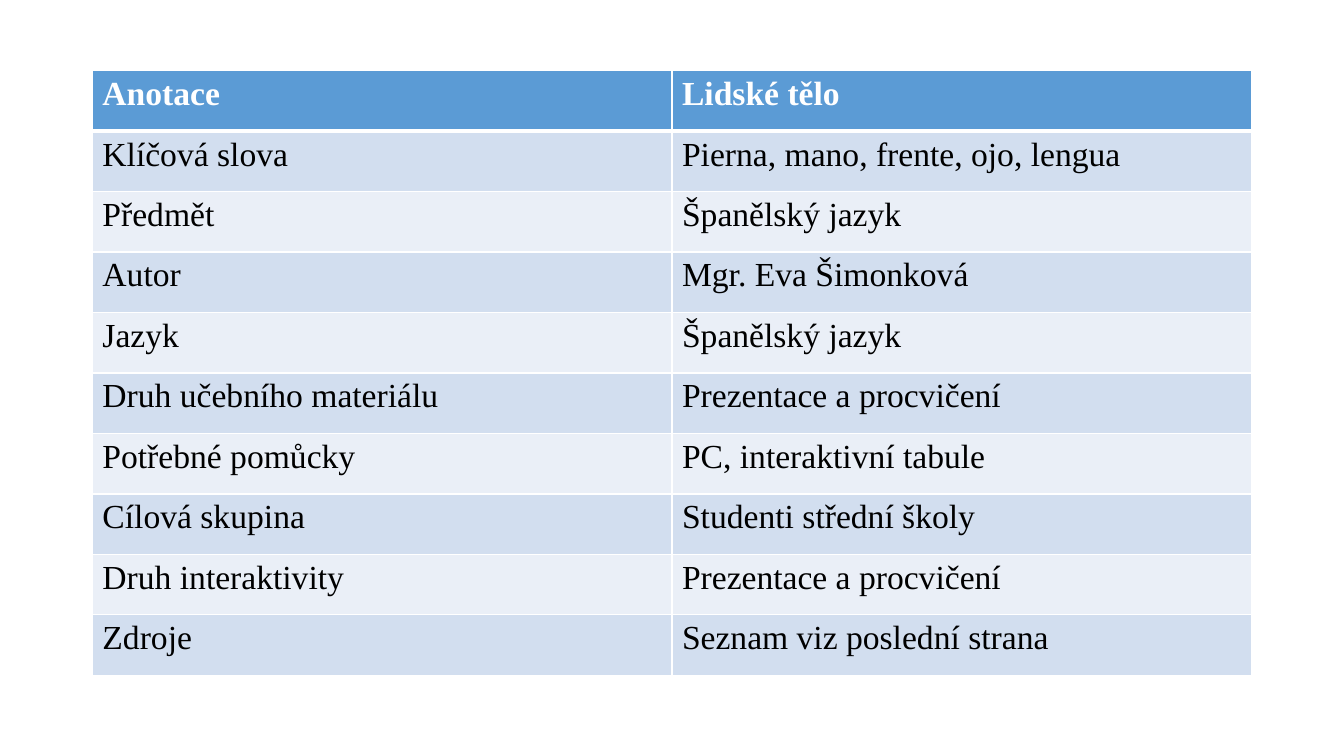
from lxml import etree
from pptx import Presentation
from pptx.dml.color import RGBColor
from pptx.oxml import ns
from pptx.util import Pt

ROWS = [
    ("Anotace", "Lidské tělo"),
    ("Klíčová slova", "Pierna, mano, frente, ojo, lengua"),
    ("Předmět", "Španělský jazyk"),
    ("Autor", "Mgr. Eva Šimonková"),
    ("Jazyk", "Španělský jazyk"),
    ("Druh učebního materiálu", "Prezentace a procvičení"),
    ("Potřebné pomůcky", "PC, interaktivní tabule"),
    ("Cílová skupina", "Studenti střední školy"),
    ("Druh interaktivity", "Prezentace a procvičení"),
    ("Zdroje", "Seznam viz poslední strana"),
]
COLORS = {"header": "5B9BD5", "odd": "D2DEEF", "even": "EAEFF7",
          "white": "FFFFFF", "black": "000000"}
FONT = "Times New Roman"
LEFT, TOP, COL_W, ROW_H = 66, 50.4, 414, 43.2
THIN, THICK = 1, 3


def write(tf, text, size=24, color="black", bold=False):
    """Put one formatted run of text in a text frame."""
    r = tf.paragraphs[0].add_run()
    r.text = text
    r.font.name, r.font.size, r.font.bold = FONT, Pt(size), bold
    r.font.color.rgb = RGBColor.from_string(COLORS[color])


def set_borders(cell, top=THIN, bottom=THIN, color="white"):
    """Draw solid lines on the four sides of a cell, before its fill."""
    tc_pr = cell._tc.get_or_add_tcPr()
    widths = {"lnL": THIN, "lnR": THIN, "lnT": top, "lnB": bottom}
    for i, (side, width) in enumerate(widths.items()):
        ln = etree.Element(ns.qn("a:" + side), w=str(Pt(width)))
        fill = etree.SubElement(ln, ns.qn("a:solidFill"))
        etree.SubElement(fill, ns.qn("a:srgbClr"), val=COLORS[color])
        tc_pr.insert(i, ln)


def add_annotation_table(s):
    """Add the two-column table with a header and banded rows."""
    n_cols = len(ROWS[0])
    table = s.shapes.add_table(len(ROWS), n_cols, Pt(LEFT), Pt(TOP),
                               Pt(COL_W * n_cols), Pt(ROW_H * len(ROWS))).table
    for i, row in enumerate(ROWS):
        header = i == 0
        band = "header" if header else "odd" if i % 2 else "even"
        for j, value in enumerate(row):
            cell = table.cell(i, j)
            cell.fill.solid()
            cell.fill.fore_color.rgb = RGBColor.from_string(COLORS[band])
            set_borders(cell, top=THICK if i == 1 else THIN,
                        bottom=THICK if header else THIN)
            write(cell.text_frame, value, bold=header,
                  color="white" if header else "black")


prs = Presentation()
prs.slide_width, prs.slide_height = Pt(960), Pt(540)
s = prs.slides.add_slide(prs.slide_layouts[6])
add_annotation_table(s)
prs.save("out.pptx")
